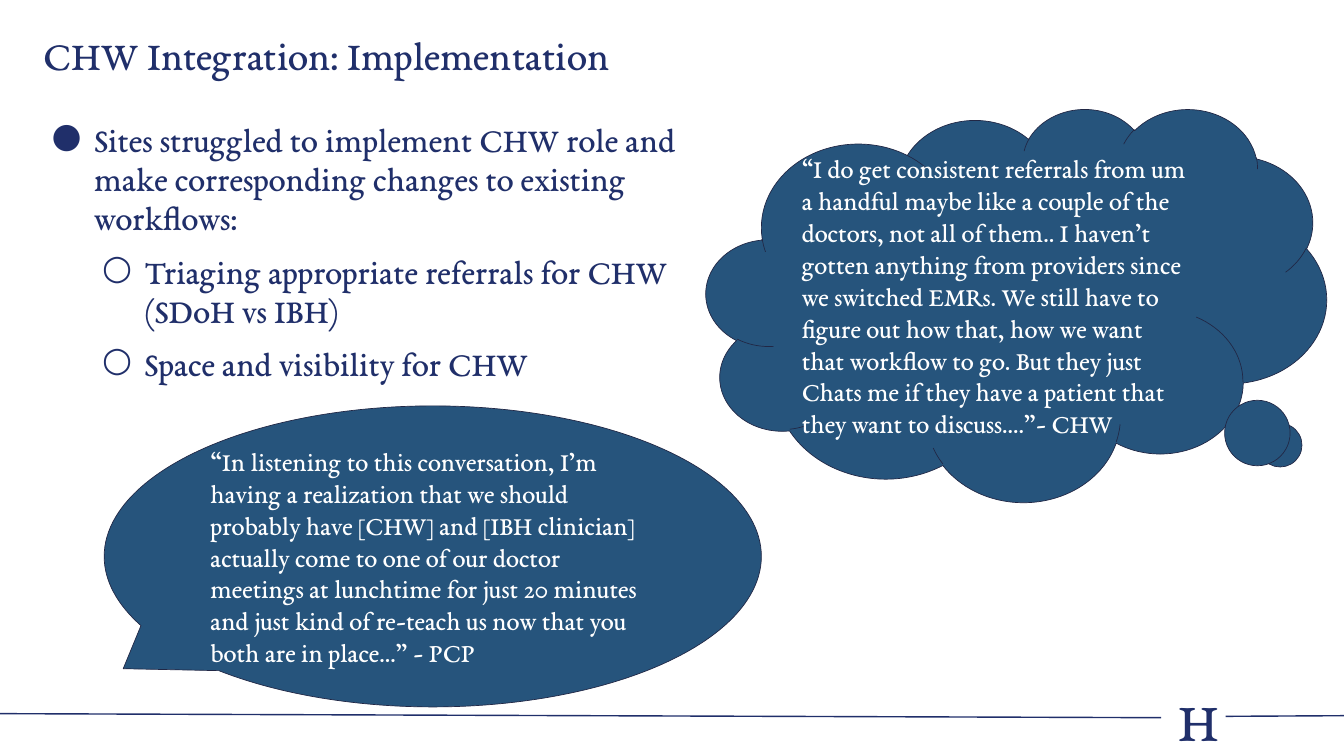
from pptx import Presentation
from pptx.dml.color import RGBColor
from pptx.enum.shapes import MSO_CONNECTOR, MSO_SHAPE
from pptx.enum.text import MSO_ANCHOR, PP_ALIGN
from pptx.oxml.ns import qn
from pptx.util import Inches, Pt
from lxml.etree import SubElement

COLORS = {"navy": "202F6A", "blue": "26547C", "outline": "212745", "white": "FFFFFF"}
FONT = "EB Garamond"


def set_frame(s, margin_x, margin_y, anchor):
    tf = s.text_frame
    tf.word_wrap = True
    tf.margin_left = tf.margin_right = Inches(margin_x)
    tf.margin_top = tf.margin_bottom = Inches(margin_y)
    tf.vertical_anchor = anchor
    return tf


def add_run(p, text, size, color):
    r = p.add_run()
    r.text = text
    r.font.name = FONT
    r.font.size = Pt(size)
    r.font.color.rgb = RGBColor.from_string(COLORS[color])


prs = Presentation()
prs.slide_width, prs.slide_height = Inches(20), Inches(11.25)
slide = prs.slides.add_slide(prs.slide_layouts[6])

# Footer letter and rules
s = slide.shapes.add_textbox(Inches(17.28), Inches(10.15), Inches(0.96), Inches(1.11))
p = set_frame(s, 0.1, 0.05, MSO_ANCHOR.TOP).paragraphs[0]
p.alignment = PP_ALIGN.RIGHT
add_run(p, "H", 60, "navy")

for x1, y1, x2, y2 in [(17.28, 10.68, 0, 10.62), (20, 10.65, 18.24, 10.66)]:
    rule = slide.shapes.add_connector(
        MSO_CONNECTOR.STRAIGHT, Inches(x1), Inches(y1), Inches(x2), Inches(y2))
    rule.line.color.rgb = RGBColor.from_string(COLORS["navy"])
    rule.line.width = Pt(1.5)
    SubElement(rule._element.spPr, qn("a:effectLst"))

# Title
s = slide.shapes.add_textbox(Inches(0.5), Inches(-0.24), Inches(17.25), Inches(2.17))
p = set_frame(s, 0.15, 0.07, MSO_ANCHOR.MIDDLE).paragraphs[0]
p.line_spacing = 0.9
add_run(p, "CHW Integration: Implementation", 44, "navy")

# Bulleted findings
findings = [
    (0, "Sites struggled to implement CHW role and make corresponding changes "
        "to existing workflows:"),
    (1, "Triaging appropriate referrals for CHW (SDoH vs IBH)"),
    (1, "Space and visibility for CHW"),
]
s = slide.shapes.add_textbox(Inches(0.5), Inches(1.73), Inches(9.78), Inches(4.73))
tf = set_frame(s, 0.15, 0.07, MSO_ANCHOR.TOP)
for i, (level, text) in enumerate(findings):
    p = tf.add_paragraph() if i else tf.paragraphs[0]
    p.level = level
    p.line_spacing = 0.95
    p.space_before = Pt(15)
    pPr = p._p.get_or_add_pPr()
    pPr.set("marL", str(Inches(0.75 * (level + 1))))
    pPr.set("indent", str(Inches(-0.63)))
    bullet_color = SubElement(pPr, qn("a:buClr"))
    SubElement(bullet_color, qn("a:srgbClr"), val=COLORS["navy"])
    SubElement(pPr, qn("a:buFont"), typeface=FONT)
    SubElement(pPr, qn("a:buChar"), char="●○"[level])
    add_run(p, text, 36.9, "navy")

# Quote callouts
quotes = [
    (MSO_SHAPE.OVAL_CALLOUT, (1.55, 6.04, 9.78, 4.48), (-0.471, 0.373),
     "“In listening to this conversation, I’m having a realization that we should "
     "probably have [CHW] and [IBH clinician] actually come to one of our doctor "
     "meetings at lunchtime for just 20 minutes and just kind of re-teach us now "
     "that you both are in place…” - PCP"),
    (MSO_SHAPE.CLOUD_CALLOUT, (10.51, 1.61, 9.23, 5.85), (0.431, 0.362),
     "“I do get consistent referrals from um a handful maybe like a couple of the "
     "doctors, not all of them.. I haven’t gotten anything from providers since we "
     "switched EMRs. We still have to figure out how that, how we want that "
     "workflow to go. But they just Chats me if they have a patient that they want "
     "to discuss….”- CHW"),
]
for kind, box, tail, text in quotes:
    s = slide.shapes.add_shape(kind, *[Inches(v) for v in box])
    s.adjustments[0], s.adjustments[1] = tail
    s.shadow.inherit = False
    s.fill.solid()
    s.fill.fore_color.rgb = RGBColor.from_string(COLORS["blue"])
    s.line.color.rgb = RGBColor.from_string(COLORS["outline"])
    s.line.width = Pt(0.75)
    p = set_frame(s, 0.15, 0.15, MSO_ANCHOR.MIDDLE).paragraphs[0]
    p.alignment = PP_ALIGN.LEFT
    add_run(p, text, 28.5, "white")

prs.save("out.pptx")
